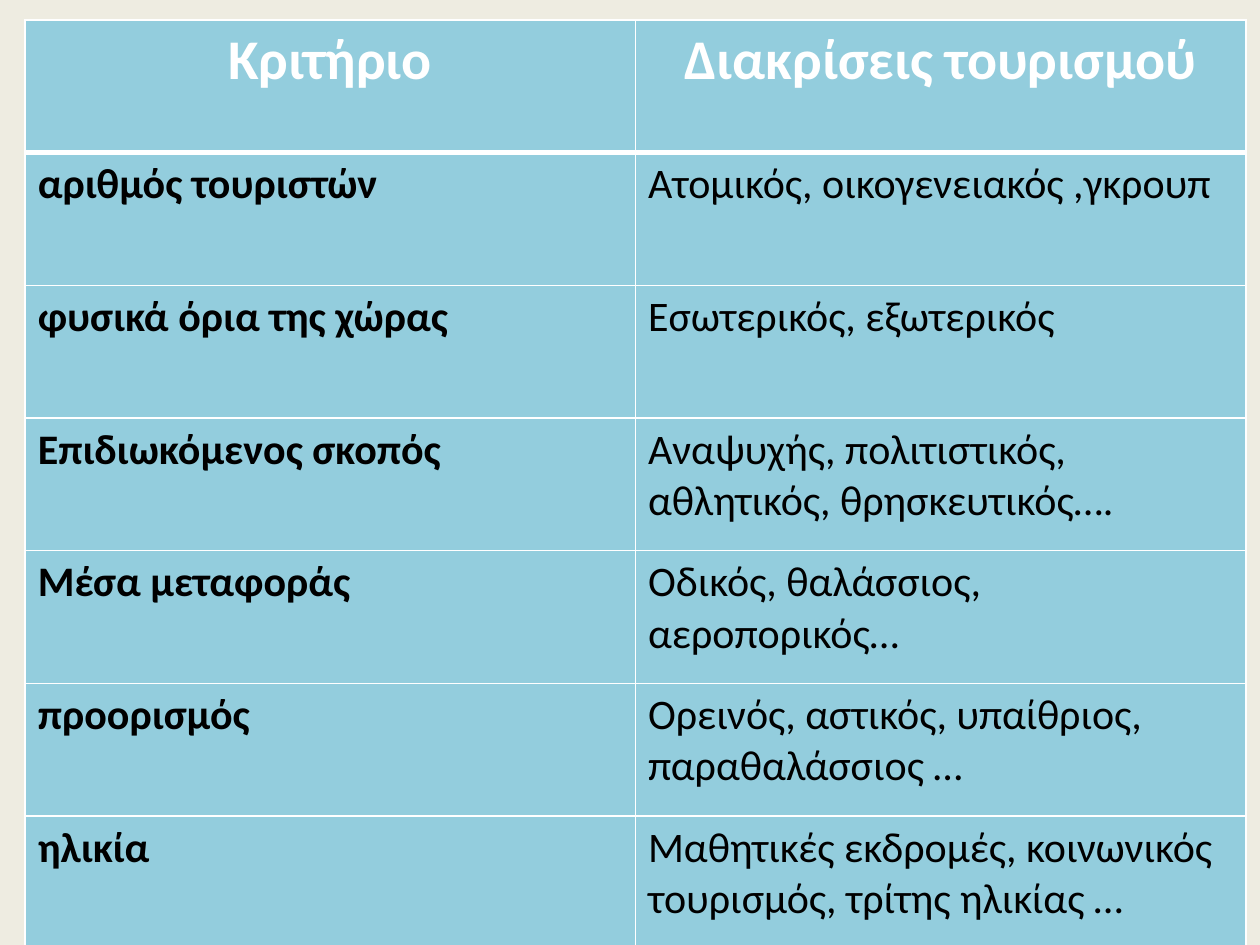
from lxml.etree import SubElement
from pptx import Presentation
from pptx.dml.color import RGBColor
from pptx.enum.text import PP_ALIGN
from pptx.oxml.ns import qn
from pptx.util import Pt

ROWS = [
    ("Κριτήριο", "Διακρίσεις τουρισμού"),
    ("αριθμός τουριστών", "Ατομικός, οικογενειακός ,γκρουπ"),
    ("φυσικά όρια της χώρας", "Εσωτερικός, εξωτερικός"),
    ("Επιδιωκόμενος σκοπός",
     "Αναψυχής, πολιτιστικός, αθλητικός, θρησκευτικός…."),
    ("Μέσα μεταφοράς", "Οδικός, θαλάσσιος, αεροπορικός…"),
    ("προορισμός", "Ορεινός, αστικός, υπαίθριος, παραθαλάσσιος …"),
    ("ηλικία", "Μαθητικές εκδρομές, κοινωνικός τουρισμός, τρίτης ηλικίας …"),
]
COLORS = {"back": "EEECE1", "cell": "93CDDD", "line": "FFFFFF",
          "head": "FFFFFF", "body": "000000"}
FONT = "Calibri"
LEFT, TOP = 14.4, 11.5
COL_W, ROW_H = 348.75, 75.8


def color(name):
    return RGBColor.from_string(COLORS[name])


def add_lines(cell, top, bottom):
    """Draw the four cell borders; they must come before the cell's fill."""
    props = cell._tc.get_or_add_tcPr()
    for tag, width in (("lnL", 1), ("lnR", 1), ("lnT", top), ("lnB", bottom)):
        line = SubElement(props, qn(f"a:{tag}"), w=str(Pt(width)))
        fill = SubElement(line, qn("a:solidFill"))
        SubElement(fill, qn("a:srgbClr"), val=COLORS["line"])


def fill_cell(cell, text, row, col):
    head = row == 0
    add_lines(cell, 3 if row == 1 else 1, 3 if head else 1)
    cell.fill.solid()
    cell.fill.fore_color.rgb = color("cell")
    cell.text_frame.text = text
    para = cell.text_frame.paragraphs[0]
    para.alignment = PP_ALIGN.CENTER if head else PP_ALIGN.LEFT
    font = para.runs[0].font
    font.name = FONT
    font.size = Pt(32 if head else 24)
    font.bold = head or col == 0
    font.color.rgb = color("head" if head else "body")


def main():
    deck = Presentation()
    deck.slide_width, deck.slide_height = Pt(720), Pt(540)
    slide = deck.slides.add_slide(deck.slide_layouts[6])
    slide.background.fill.solid()
    slide.background.fill.fore_color.rgb = color("back")

    count, width = len(ROWS), len(ROWS[0])
    table = slide.shapes.add_table(
        count, width, Pt(LEFT), Pt(TOP),
        Pt(width * COL_W), Pt(count * ROW_H)).table
    for col in table.columns:
        col.width = Pt(COL_W)
    for r, texts in enumerate(ROWS):
        table.rows[r].height = Pt(ROW_H)
        for c, text in enumerate(texts):
            fill_cell(table.cell(r, c), text, r, c)

    deck.save("out.pptx")


if __name__ == "__main__":
    main()
